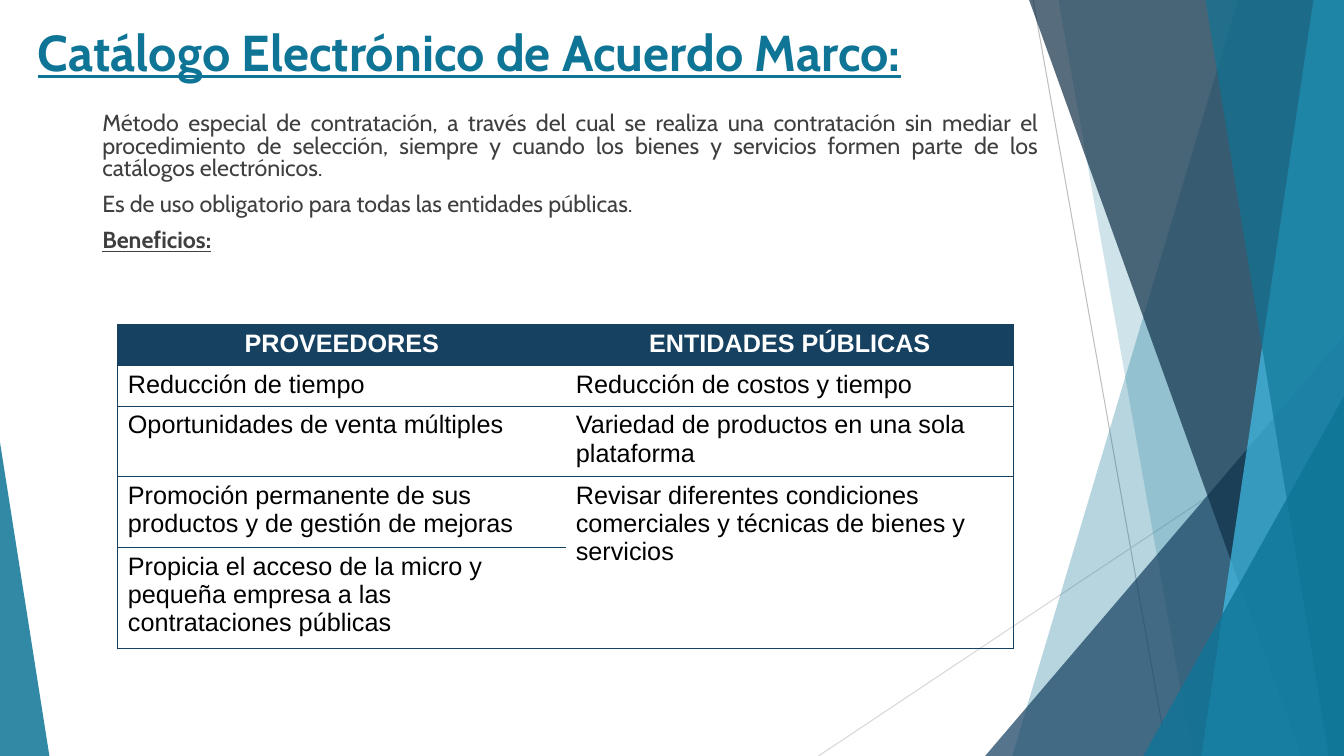
import pptx
import pptx.dml.color
import pptx.enum.shapes
import pptx.enum.text
import pptx.oxml
import pptx.oxml.ns
import pptx.util
from dataclasses import dataclass

Pt = pptx.util.Pt
qn = pptx.oxml.ns.qn
SHAPE = pptx.enum.shapes.MSO_SHAPE
ALIGN = pptx.enum.text.PP_ALIGN


@dataclass(frozen=True)
class Theme:
    teal: str = "0F7597"
    navy: str = "164161"
    deep: str = "103048"
    sky: str = "42C2EC"
    body: str = "3F3F3F"
    black: str = "000000"
    white: str = "FFFFFF"
    rays: tuple = ("BFBFBF", "D8D8D8")
    font: str = "Cabin"
    table_font: str = "Arial"
    title_size: float = 36
    body_size: float = 16.6
    table_size: float = 18
    hairline: float = 0.75


T = Theme()
W, H = 960, 540
NO_STYLE = "{2D5ABB26-0587-4C30-8999-92F81FD0307C}"

INTRO = [
    ("Método especial de contratación, a través del cual se realiza una contratación sin mediar "
     "el procedimiento de selección, siempre y cuando los bienes y servicios formen parte de los "
     "catálogos electrónicos.", {}),
    ("Es de uso obligatorio para todas las entidades públicas.", {}),
    ("Beneficios:", {"bold": True, "underline": True}),
]
BENEFITS = [
    ("PROVEEDORES", "ENTIDADES PÚBLICAS"),
    ("Reducción de tiempo", "Reducción de costos y tiempo"),
    ("Oportunidades de venta múltiples", "Variedad de productos en una sola plataforma"),
    ("Promoción permanente de sus productos y de gestión de mejoras",
     "Revisar diferentes condiciones comerciales y técnicas de bienes y servicios"),
    ("Propicia el acceso de la micro y pequeña empresa a las contrataciones públicas", None),
]
ROW_HEIGHTS = (29.2, 29.2, 47.5, 47.5, 67.8)


def rgb(color):
    return pptx.dml.color.RGBColor.from_string(color)


def set_attrs(obj, values):
    for name, value in values.items():
        setattr(obj, name, value)


def add_run(p, text, color, **font):
    r = p.add_run()
    r.text = text
    set_attrs(r.font, font)
    r.font.color.rgb = rgb(color)


def add_text(slide, box):
    tf = slide.shapes.add_textbox(*map(Pt, box)).text_frame
    tf.word_wrap = True
    return tf


def paint(sp, color, opacity):
    """Fill a shape with a see-through colour, without line or shadow."""
    sp.shadow.inherit = False
    sp.line.fill.background()
    sp.fill.solid()
    sp.fill.fore_color.rgb = rgb(color)
    clr = sp.fill._xPr.find(".//" + qn("a:srgbClr"))
    pptx.oxml.ns  # namespace helpers
    alpha = clr.makeelement(qn("a:alpha"), {"val": str(opacity * 1000)})
    clr.append(alpha)


def add_ray(slide, box, start, end, color):
    x, y = box[:2]
    points = (x + start[0], y + start[1], x + end[0], y + end[1])
    line = slide.shapes.add_connector(
        pptx.enum.shapes.MSO_CONNECTOR.STRAIGHT, *map(Pt, points))
    line.line.color.rgb = rgb(color)
    line.line.width = Pt(T.hairline)
    props = line._element.spPr
    props.append(props.makeelement(qn("a:effectLst"), {}))


def add_band(slide, box, top, bottom, color, opacity):
    """Facet from a slanted left side to the right edge of the box."""
    x, y, w, h = box
    corners = [(x + top, y), (x + w, y), (x + w, y + h), (x + bottom, y + h)]
    corners = [(Pt(a), Pt(b)) for a, b in corners]
    builder = slide.shapes.build_freeform(*corners[0], scale=1.0)
    builder.add_line_segments(corners[1:], close=True)
    paint(builder.convert_to_shape(), color, opacity)


def add_corner(slide, box, w, h, apex, color, opacity):
    """Triangle in a bottom corner of the box; apex 0 is left, 1 is right."""
    left = box[0] + apex * (box[2] - w)
    top = box[1] + box[3] - h
    sp = slide.shapes.add_shape(SHAPE.ISOSCELES_TRIANGLE, *map(Pt, (left, top, w, h)))
    sp.adjustments[0] = apex
    paint(sp, color, opacity)


def add_facets(slide, box):
    add_ray(slide, box, (738, 0), (834, H), T.rays[0])
    add_ray(slide, box, (W, 290), (584.6, H), T.rays[1])
    add_band(slide, box, 884.2, 723, T.teal, 30)
    add_band(slide, box, 756, 851.8, T.teal, 20)
    add_corner(slide, box, 256.3, 300.2, 1, T.navy, 72)
    add_band(slide, box, 735.1, 929.5, T.deep, 70)
    add_band(slide, box, 938.2, 858.2, T.sky, 70)
    add_band(slide, box, 861.1, 949, T.teal, 65)
    add_corner(slide, box, 143.3, 257, 1, T.teal, 80)
    add_corner(slide, box, 35.3, 224, 0, T.teal, 85)


def add_title(slide, box):
    p = add_text(slide, box).paragraphs[0]
    add_run(p, "Catálogo Electrónico de Acuerdo Marco:", T.teal, name=T.font,
            size=Pt(T.title_size), bold=True, underline=True)


def add_intro(slide, box):
    tf = add_text(slide, box)
    for i, (text, style) in enumerate(INTRO):
        p = tf.add_paragraph() if i else tf.paragraphs[0]
        set_attrs(p, {"alignment": ALIGN.JUSTIFY, "line_spacing": 0.8,
                      "space_before": Pt(10 if i else 0)})
        add_run(p, text, T.body, name=T.font, size=Pt(T.body_size), **style)


def set_borders(cell, sides):
    props = cell._tc.get_or_add_tcPr()
    for i, side in enumerate(s for s in "LRTB" if s in sides):
        props.insert(i, pptx.oxml.parse_xml(
            f'<a:ln{side} xmlns:a="http://schemas.openxmlformats.org/drawingml/2006/main" '
            f'w="{Pt(T.hairline)}"><a:solidFill><a:srgbClr val="{T.navy}"/></a:solidFill>'
            f'</a:ln{side}>'))


def add_benefits(slide, box):
    last = len(BENEFITS) - 1
    table = slide.shapes.add_table(len(BENEFITS), 2, *map(Pt, box)).table
    set_attrs(table, {"first_row": False, "horz_banding": False})
    table._tbl.tblPr.find(qn("a:tableStyleId")).text = NO_STYLE
    for column in table.columns:
        column.width = Pt(box[2] / 2)
    for row, height in zip(table.rows, ROW_HEIGHTS):
        row.height = Pt(height)
    table.cell(3, 1).merge(table.cell(4, 1))
    for i, texts in enumerate(BENEFITS):
        head = i == 0
        for j, text in enumerate(texts):
            cell = table.cell(i, j)
            if head:
                cell.fill.solid()
                cell.fill.fore_color.rgb = rgb(T.navy)
            else:
                cell.fill.background()
            bottom = i in (0, 2, last) or (i, j) == (3, 1)
            set_borders(cell, "LR"[j] + "T" * (i in (0, 1, 3)) + "B" * bottom)
            if text:
                p = cell.text_frame.paragraphs[0]
                p.alignment = ALIGN.CENTER if head else ALIGN.LEFT
                add_run(p, text, T.white if head else T.black, name=T.table_font,
                        size=Pt(T.table_size), bold=head)


def main():
    prs = pptx.Presentation()
    set_attrs(prs, {"slide_width": Pt(W), "slide_height": Pt(H)})
    slide = prs.slides.add_slide(prs.slide_layouts[6])
    add_facets(slide, (0, 0, W, H))
    add_title(slide, (20, 11.5, 828, 66))
    add_intro(slide, (66, 77.8, 682, 115))
    add_benefits(slide, (84.2, 231.6, 640, sum(ROW_HEIGHTS)))
    prs.save("out.pptx")


if __name__ == "__main__":
    main()
